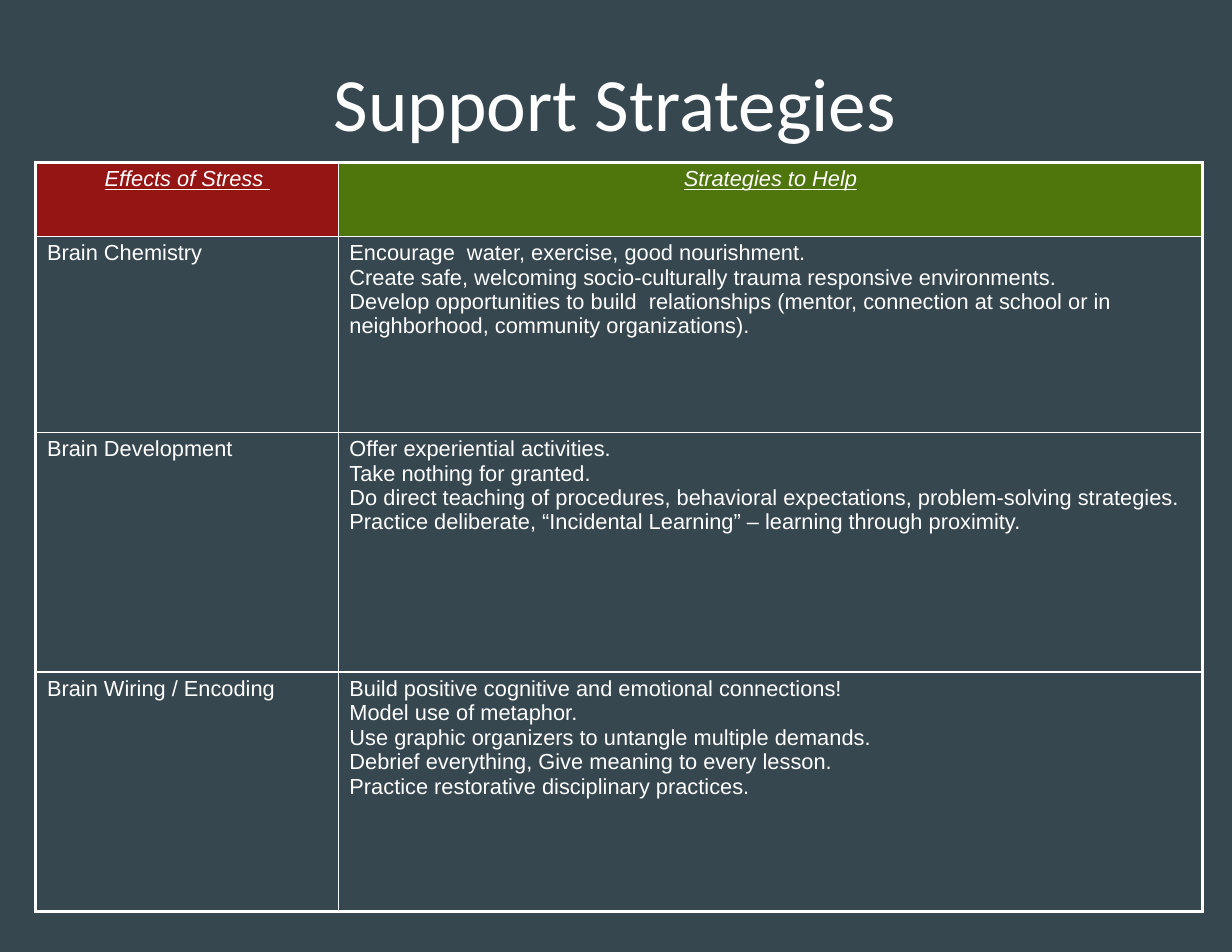
from lxml.etree import SubElement
from pptx import Presentation
from pptx.dml.color import RGBColor
from pptx.enum.text import MSO_ANCHOR, PP_ALIGN
from pptx.oxml.ns import qn
from pptx.util import Inches, Pt

WHITE = "FFFFFF"
SLATE = "37474F"
HEADER_FILLS = ["951414", "4F750D"]
OUTER_WIDTH, INNER_WIDTH = 2.25, 1

COLUMN_WIDTHS = [2.7, 7.72]
ROW_HEIGHTS = [0.66, 1.75, 2.14, 2.14]
ROWS = [
    (["Effects of Stress "], ["Strategies to Help"]),
    (["Brain Chemistry"], [
        "Encourage  water, exercise, good nourishment. ",
        "Create safe, welcoming socio-culturally trauma responsive environments.",
        "Develop opportunities to build  relationships (mentor, connection at school "
        "or in neighborhood, community organizations).",
    ]),
    (["Brain Development"], [
        "Offer experiential activities. ",
        "Take nothing for granted.",
        "Do direct teaching of procedures, behavioral expectations, "
        "problem-solving strategies.",
        "Practice deliberate, “Incidental Learning” – learning through proximity.",
    ]),
    (["Brain Wiring / Encoding"], [
        "Build positive cognitive and emotional connections!  ",
        "Model use of metaphor. ",
        "Use graphic organizers to untangle multiple demands.",
        "Debrief everything, Give meaning to every lesson. ",
        "Practice restorative disciplinary practices.",
    ]),
]


def color(hex_string):
    return RGBColor.from_string(hex_string)


def write_text(text_frame, lines, font="Arial", size=14, text_color=WHITE,
               align=PP_ALIGN.LEFT, italic=False, underline=False):
    for index, line in enumerate(lines):
        paragraph = text_frame.paragraphs[0] if index == 0 else text_frame.add_paragraph()
        paragraph.alignment = align
        run = paragraph.add_run()
        run.text = line
        run.font.name = font
        run.font.size = Pt(size)
        run.font.bold = False
        run.font.italic = italic
        run.font.underline = underline
        run.font.color.rgb = color(text_color)


def set_borders(cell, widths, line_color=WHITE):
    """Draw cell borders; widths are points for left, right, top, bottom."""
    properties = cell._tc.get_or_add_tcPr()
    for side, width in zip("LRTB", widths):
        line = SubElement(properties, qn(f"a:ln{side}"), w=str(Pt(width)))
        fill = SubElement(line, qn("a:solidFill"))
        SubElement(fill, qn("a:srgbClr"), val=line_color)


def add_title(slide, text, left, top, width, height):
    title = slide.shapes.title
    title.left, title.top = Inches(left), Inches(top)
    title.width, title.height = Inches(width), Inches(height)
    frame = title.text_frame
    frame.word_wrap = True
    frame.vertical_anchor = MSO_ANCHOR.MIDDLE
    frame.margin_left = frame.margin_right = Inches(0.11)
    frame.margin_top = frame.margin_bottom = Inches(0.11)
    write_text(frame, [text], font="Calibri", size=48.4, align=PP_ALIGN.CENTER)


def add_strategy_table(slide, left, top):
    last_row, last_column = len(ROWS) - 1, len(COLUMN_WIDTHS) - 1
    table = slide.shapes.add_table(
        len(ROWS), len(COLUMN_WIDTHS), Inches(left), Inches(top),
        Inches(sum(COLUMN_WIDTHS)), Inches(sum(ROW_HEIGHTS))).table
    table.first_row = table.horz_banding = False
    for column, width in zip(table.columns, COLUMN_WIDTHS):
        column.width = Inches(width)
    for row, height in zip(table.rows, ROW_HEIGHTS):
        row.height = Inches(height)

    for row_index, row_texts in enumerate(ROWS):
        for column_index, lines in enumerate(row_texts):
            cell = table.cell(row_index, column_index)
            cell.margin_left = cell.margin_right = Inches(0.1)
            cell.margin_top = cell.margin_bottom = Inches(0.04)
            on_edge = (column_index == 0, column_index == last_column,
                       row_index == 0, row_index == last_row)
            set_borders(cell, [OUTER_WIDTH if edge else INNER_WIDTH for edge in on_edge])
            if row_index == 0:
                cell.fill.solid()
                cell.fill.fore_color.rgb = color(HEADER_FILLS[column_index])
                write_text(cell.text_frame, lines, align=PP_ALIGN.CENTER,
                           italic=True, underline=True)
            else:
                cell.fill.background()
                write_text(cell.text_frame, lines)


def main():
    presentation = Presentation()
    presentation.slide_width, presentation.slide_height = Inches(11), Inches(8.5)
    slide = presentation.slides.add_slide(presentation.slide_layouts[5])
    slide.background.fill.solid()
    slide.background.fill.fore_color.rgb = color(SLATE)
    add_title(slide, "Support Strategies", 0.54, 0.39, 9.9, 1.03)
    add_strategy_table(slide, 0.32, 1.45)
    presentation.save("out.pptx")


if __name__ == "__main__":
    main()
